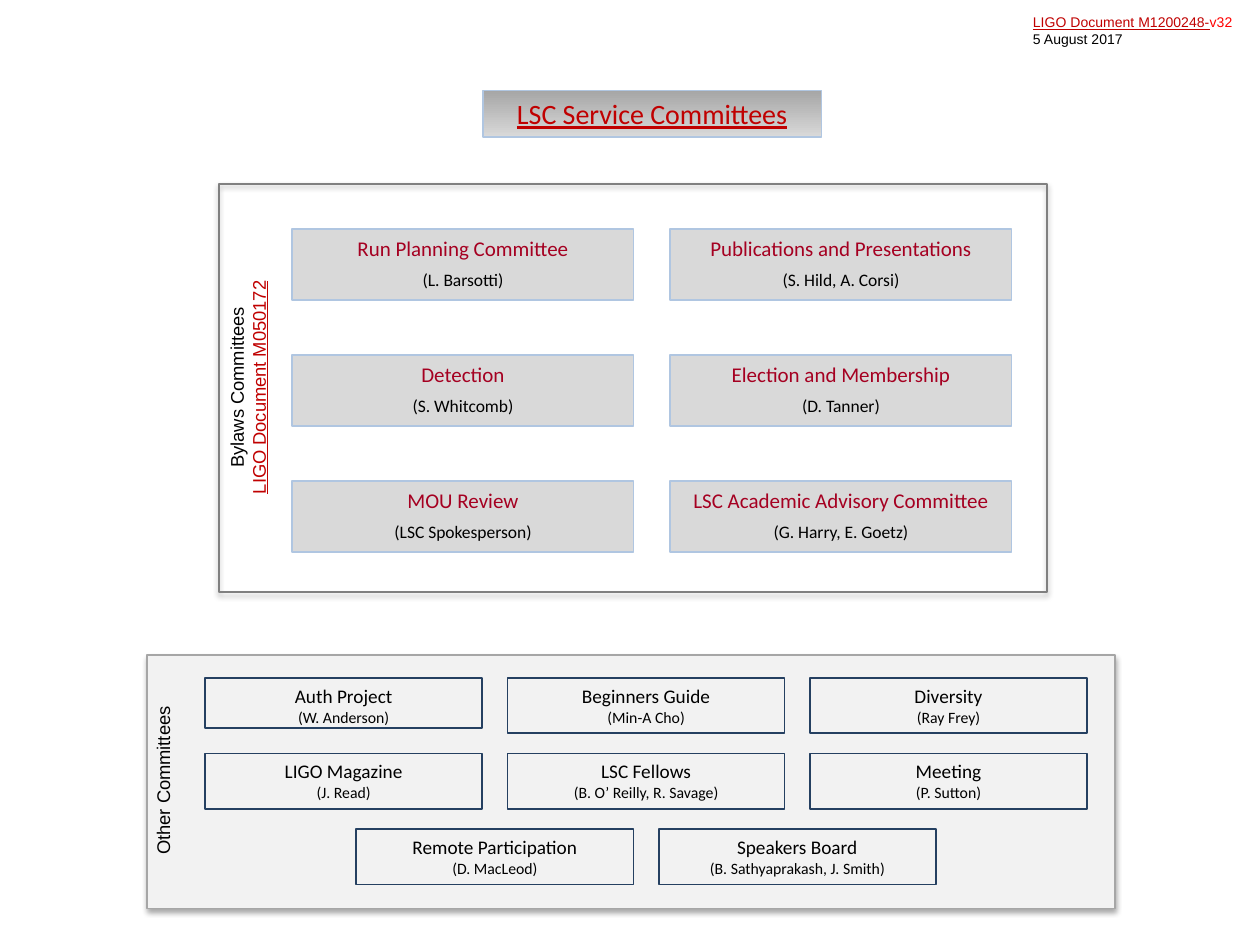
from lxml import etree
from pptx import Presentation
from pptx.dml.color import RGBColor
from pptx.enum.shapes import MSO_SHAPE
from pptx.enum.text import MSO_ANCHOR, PP_ALIGN as ALIGN
from pptx.oxml.ns import qn
from pptx.util import Pt

COLORS = {
    "black": "000000", "red": "C00000", "bright red": "FF0000", "crimson": "A50021",
    "navy": "254061", "pale blue": "B0C6E1", "mid gray": "A6A6A6",
    "light gray": "D9D9D9", "panel": "F2F2F2", "frame": "808080",
}

presentation = Presentation()
presentation.slide_width, presentation.slide_height = Pt(720), Pt(540)
slide = presentation.slides.add_slide(presentation.slide_layouts[6])


def add_rect(left, top, width, height, line, fill=None, shadow=False):
    shape = slide.shapes.add_shape(
        MSO_SHAPE.RECTANGLE, Pt(left), Pt(top), Pt(width), Pt(height))
    shape.shadow.inherit = False
    if fill:
        shape.fill.solid()
        shape.fill.fore_color.rgb = RGBColor.from_string(COLORS[fill])
    else:
        shape.fill.background()
    shape.line.color.rgb = RGBColor.from_string(COLORS[line])
    shape.line.width = Pt(1)
    if shadow:
        effects = shape._element.spPr.find(qn("a:effectLst"))
        outer = etree.SubElement(effects, qn("a:outerShdw"), blurRad=str(Pt(3.1)),
                                 dist=str(Pt(1.8)), dir="5400000", rotWithShape="0")
        color = etree.SubElement(outer, qn("a:srgbClr"), val=COLORS["black"])
        etree.SubElement(color, qn("a:alpha"), val="35000")
    return shape


def write_text(shape, paragraphs, font="Calibri", align=ALIGN.CENTER, gap=0):
    """Each paragraph is a list of (text, size, color, underline) runs."""
    frame = shape.text_frame
    frame.word_wrap = True
    frame.vertical_anchor = MSO_ANCHOR.TOP
    for index, runs in enumerate(paragraphs):
        paragraph = frame.add_paragraph() if index else frame.paragraphs[0]
        paragraph.alignment = align
        paragraph.space_before = Pt(gap if index else 0)
        for text, size, color, underline in runs:
            run = paragraph.add_run()
            run.text = text
            run.font.name, run.font.size = font, Pt(size)
            run.font.underline = underline
            run.font.color.rgb = RGBColor.from_string(COLORS[color])


# Document reference
reference = slide.shapes.add_textbox(Pt(583.2), Pt(4.3), Pt(132.5), Pt(26.6))
write_text(reference, [
    [("LIGO Document M1200248-", 8, "red", True), ("v32", 8, "bright red", False)],
    [("5 August 2017", 8, "black", False)],
], font="Arial", align=ALIGN.LEFT)

# Title
title = add_rect(275.8, 51.8, 193.7, 26.6, "pale blue")
title.fill.gradient()
title.fill.gradient_angle = 270
for stop, name in zip(title.fill.gradient_stops, ("mid gray", "light gray")):
    stop.color.rgb = RGBColor.from_string(COLORS[name])
write_text(title, [[("LSC Service Committees", 16, "red", True)]])

# Panels
add_rect(84.2, 374.4, 553, 144.7, "mid gray", fill="panel", shadow=True)
add_rect(125.3, 105.1, 473, 233.3, "frame", shadow=True)

# Bylaws committees: two columns, three rows
bylaws = [
    ("Run Planning Committee", "(L. Barsotti)"),
    ("Publications and Presentations", "(S. Hild, A. Corsi)"),
    ("Detection", "(S. Whitcomb)"),
    ("Election and Membership", "(D. Tanner)"),
    ("MOU Review", "(LSC Spokesperson)"),
    ("LSC Academic Advisory Committee", "(G. Harry, E. Goetz)"),
]
for index, (name, chair) in enumerate(bylaws):
    row, column = divmod(index, 2)
    box = add_rect(167 + 216 * column, 131 + 72 * row, 195.1, 40.3,
                   "pale blue", fill="light gray")
    write_text(box, [[(name, 12, "crimson", False)], [(chair, 10, "black", False)]], gap=5)

# Other committees: two rows of three, then a centred pair
others = [
    [("Auth Project", "(W. Anderson)"), ("Beginners Guide", "(Min-A Cho)"),
     ("Diversity", "(Ray Frey)")],
    [("LIGO Magazine", "(J. Read)"), ("LSC Fellows", "(B. O’ Reilly, R. Savage)"),
     ("Meeting", "(P. Sutton)")],
    [("Remote Participation", "(D. MacLeod)"),
     ("Speakers Board", "(B. Sathyaprakash, J. Smith)")],
]
for row, committees in enumerate(others):
    left = 117.2 + 86.4 * (3 - len(committees))
    for column, (name, chair) in enumerate(committees):
        height = 28.8 if name == "Auth Project" else 31.7
        box = add_rect(left + 172.8 * column, 387.4 + 43.2 * row, 158.4, height, "navy")
        write_text(box, [[(name, 11, "black", False)], [(chair, 9, "black", False)]])

# Rotated panel labels
labels = [
    (24.5, 205.2, 234, 32.4, [[("Bylaws Committees", 10.5, "black", False)],
                              [("LIGO Document M050172", 10.5, "red", True)]]),
    (20.9, 435.6, 145.4, 20.9, [[("Other Committees", 10.5, "black", False)]]),
]
for left, top, width, height, paragraphs in labels:
    label = slide.shapes.add_textbox(Pt(left), Pt(top), Pt(width), Pt(height))
    label.rotation = 270
    write_text(label, paragraphs, font="Arial")

presentation.save("out.pptx")
